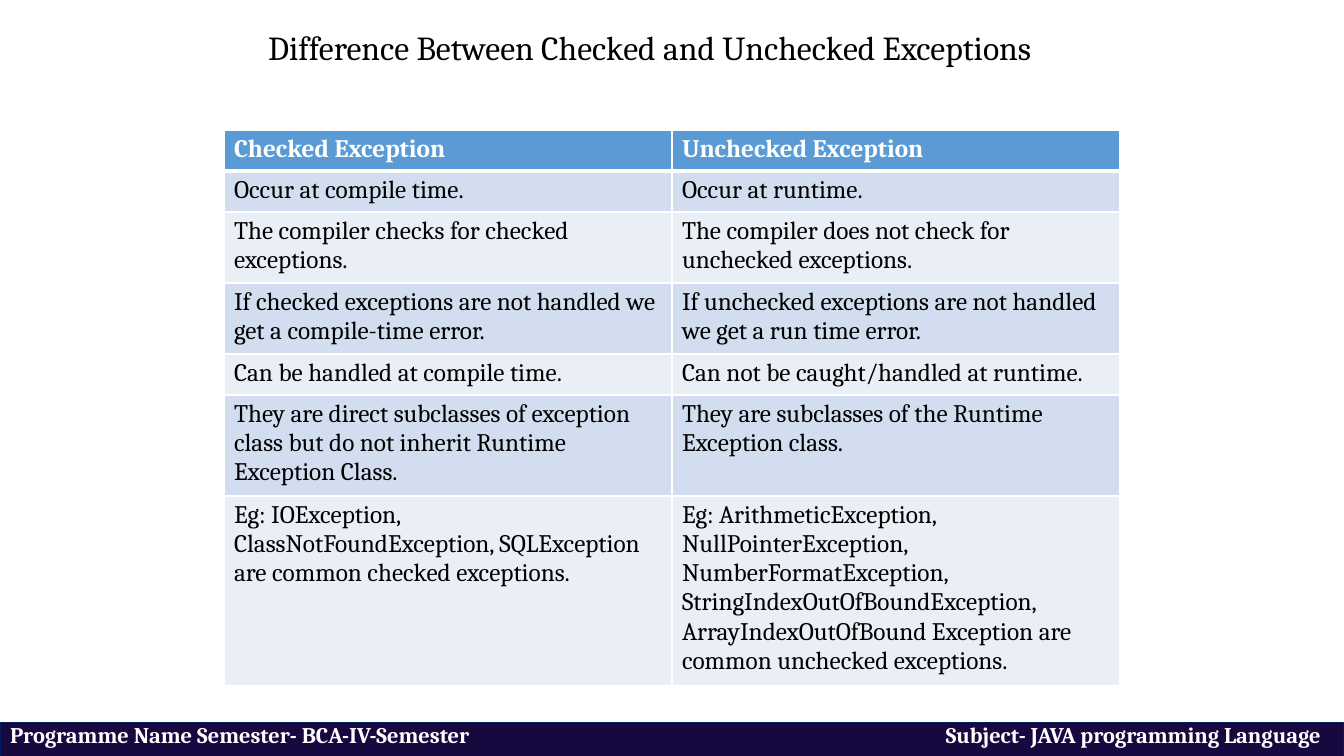
"""Build the slide on checked and unchecked exceptions."""
import pptx
import pptx.dml.color
import pptx.enum.shapes
import pptx.enum.text
import pptx.oxml
import pptx.oxml.ns
import pptx.util

EMU_PER_PX = 914400 / 100.8
WHITE, BLACK, HEADER, BAND, PALE = "FFFFFF", "000000", "5B9BD5", "D2DEEF", "EAEFF7"
ROW_HEIGHTS = [41, 41, 71, 71, 41, 101, 190]
COMPARISON = [
    ("Checked Exception", "Unchecked Exception"),
    ("Occur at compile time.", "Occur at runtime."),
    ("The compiler checks for checked exceptions.",
     "The compiler does not check for unchecked exceptions."),
    ("If checked exceptions are not handled we get a compile-time error.",
     "If unchecked exceptions are not handled we get a run time error."),
    ("Can be handled at compile time.", "Can not be caught/handled at runtime."),
    ("They are direct subclasses of exception class but do not inherit Runtime Exception Class.",
     "They are subclasses of the Runtime Exception class."),
    ("Eg: IOException, ClassNotFoundException, SQLException are common checked exceptions.",
     "Eg: ArithmeticException, NullPointerException, NumberFormatException, "
     "StringIndexOutOfBoundException, ArrayIndexOutOfBound Exception are common "
     "unchecked exceptions."),
]


def px(length):
    """Turn pixels into EMU."""
    return pptx.util.Emu(round(length * EMU_PER_PX))


def rgb(code):
    """Turn a hex string into a colour."""
    return pptx.dml.color.RGBColor.from_string(code)


def apply(target, values):
    """Set each named attribute on the target."""
    for name, value in values.items():
        setattr(target, name, value)


def write(frame, text, size, color, bold=False):
    """Put one left-aligned paragraph in a text frame."""
    frame.text = text
    paragraph = frame.paragraphs[0]
    paragraph.alignment = pptx.enum.text.PP_ALIGN.LEFT
    for run in paragraph.runs:
        apply(run.font, {"name": "Cambria", "size": pptx.util.Pt(size), "bold": bold})
        run.font.color.rgb = rgb(color)
    return paragraph


def add_border(cell, side, points):
    """Draw a white border on one side of a cell."""
    width = pptx.util.Pt(points)
    cell._tc.get_or_add_tcPr().append(pptx.oxml.parse_xml(
        f'<a:ln{side} {pptx.oxml.ns.nsdecls("a")} w="{width}"><a:solidFill>'
        f'<a:srgbClr val="{WHITE}"/></a:solidFill></a:ln{side}>'))


def add_heading(slide, text):
    """Fill and place the title."""
    heading = slide.shapes.title
    apply(heading, {"left": px(258), "top": px(22), "width": px(828), "height": px(50)})
    apply(heading.text_frame, {
        "word_wrap": True,
        "auto_size": pptx.enum.text.MSO_AUTO_SIZE.NONE,
        "vertical_anchor": pptx.enum.text.MSO_ANCHOR.MIDDLE,
    })
    write(heading.text_frame, text, 24, BLACK)


def add_comparison(slide, rows):
    """Add the two-column table."""
    table = slide.shapes.add_table(
        len(rows), 2, px(224), px(130), px(896), px(sum(ROW_HEIGHTS))).table
    for row_index, entries in enumerate(rows):
        is_header = row_index == 0
        fill = HEADER if is_header else BAND if row_index % 2 else PALE
        table.rows[row_index].height = px(ROW_HEIGHTS[row_index])
        for cell, entry in zip(table.rows[row_index].cells, entries):
            write(cell.text_frame, entry, 18, WHITE if is_header else BLACK, is_header)
            for side in "LRTB":
                thick = (is_header and side == "B") or (row_index == 1 and side == "T")
                add_border(cell, side, 3 if thick else 1)
            cell.fill.solid()
            cell.fill.fore_color.rgb = rgb(fill)


def add_footer(slide, programme, subject):
    """Add the bottom bar with text at both ends."""
    bar = slide.shapes.add_shape(
        pptx.enum.shapes.MSO_SHAPE.RECTANGLE, 0, px(723), px(1344), px(34))
    bar.shadow.inherit = False
    bar.fill.solid()
    bar.fill.fore_color.rgb = rgb("170840")
    bar.line.color.rgb = rgb("002060")
    bar.line.width = pptx.util.Pt(0.75)
    apply(bar.text_frame, {
        "word_wrap": True, "margin_left": px(10), "margin_right": px(10),
        "margin_top": 0, "margin_bottom": px(10),
        "vertical_anchor": pptx.enum.text.MSO_ANCHOR.MIDDLE,
    })
    paragraph = write(bar.text_frame, f"{programme}\t{subject}", 16, WHITE, True)
    paragraph._p.get_or_add_pPr().append(pptx.oxml.parse_xml(
        f'<a:tabLst {pptx.oxml.ns.nsdecls("a")}>'
        f'<a:tab pos="{px(1311)}" algn="r"/></a:tabLst>'))


def main():
    """Build and save the slide."""
    deck = pptx.Presentation()
    apply(deck, {"slide_width": px(1344), "slide_height": px(756)})
    slide = deck.slides.add_slide(deck.slide_layouts[5])
    add_footer(slide, "Programme Name Semester- BCA-IV-Semester",
               "Subject- JAVA programming Language")
    add_heading(slide, "Difference Between Checked and Unchecked Exceptions")
    add_comparison(slide, COMPARISON)
    deck.save("out.pptx")


if __name__ == "__main__":
    main()
